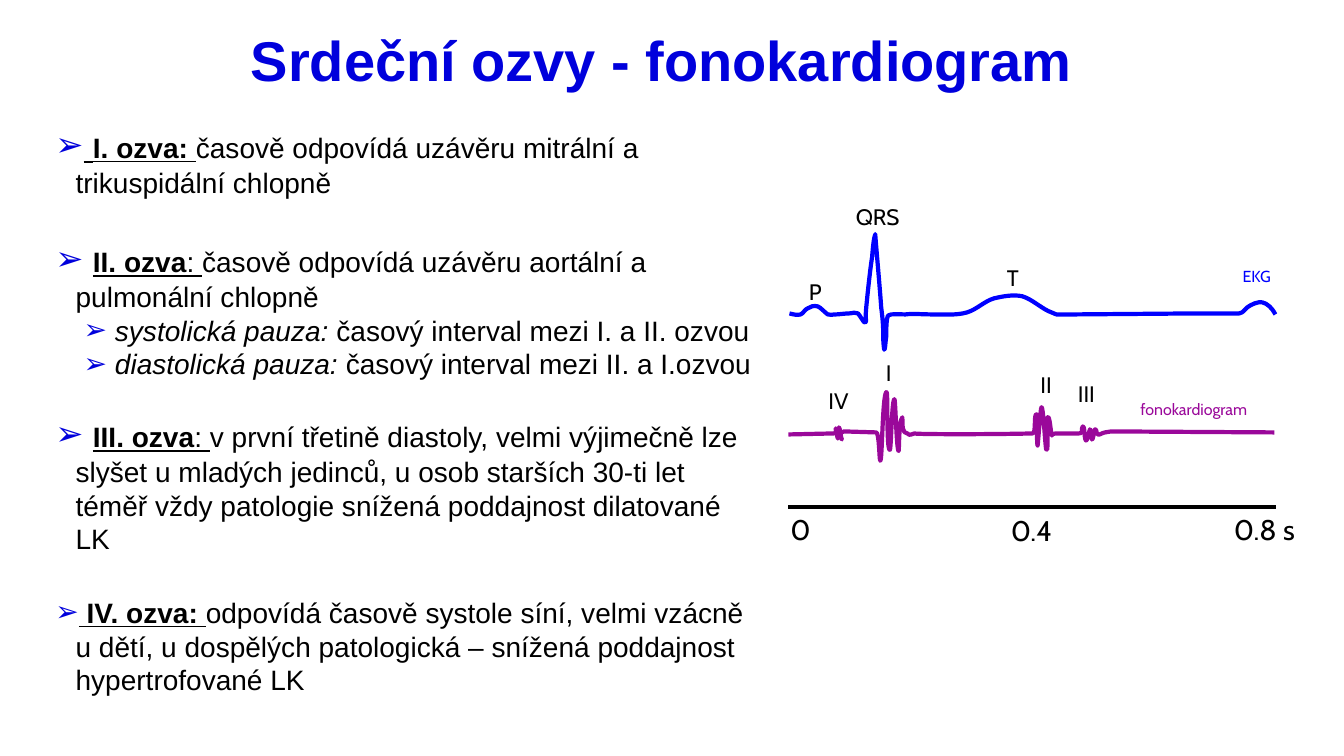
from lxml.etree import SubElement
from pptx import Presentation
from pptx.dml.color import RGBColor
from pptx.enum.shapes import MSO_CONNECTOR
from pptx.enum.text import MSO_ANCHOR, MSO_AUTO_SIZE, PP_ALIGN
from pptx.oxml.ns import qn
from pptx.util import Inches, Pt

COLORS = {"title": "0000DC", "text": "000000", "ekg": "0000FF", "phono": "9A089A"}
TITLE_BOX = (0.68, 0.36, 11.76, 0.49)
BODY_BOX = (0.48, 1.24, 7.03, 5.73)
CHART_ORIGIN = (7.8, 2)

BODY = [
    (0, 0, [(" ", 24, "bu"), ("I. ozva: ", 20, "bu"),
            ("časově odpovídá uzávěru mitrální a trikuspidální chlopně", 20, "")]),
    (0, 28.7, [(" ", 24, "b"), ("II. ozva", 20, "bu"), (": ", 20, "u"),
               ("časově odpovídá uzávěru aortální a pulmonální chlopně", 20, "")]),
    (1, 0, [(" ", 20, ""), ("systolická pauza: ", 20, "i"),
            ("časový interval mezi I. a II. ozvou", 20, "")]),
    (1, 0, [(" ", 20, ""), ("diastolická pauza: ", 20, "i"),
            ("časový interval mezi II. a I.ozvou", 20, "")]),
    (0, 24.2, [(" ", 24, "b"), ("III. ozva", 20, "bu"), (": ", 20, "u"),
               ("v první třetině diastoly, velmi výjimečně lze slyšet u mladých jedinců, "
                "u osob starších 30-ti let téměř vždy patologie snížená poddajnost "
                "dilatované LK", 20, "")]),
    (0, 28.7, [(" IV. ozva: ", 20, "bu"),
               ("odpovídá časově systole síní, velmi vzácně u dětí, u dospělých "
                "patologická – snížená poddajnost hypertrofované LK", 20, "")]),
]

EKG = [
    (3, 111), (7, 112, 11, 113, 14, 112), (17, 111, 18, 107, 21, 106),
    (24, 104, 27, 103, 31, 104), (34, 105, 38, 110, 41, 112),
    (44, 113, 45, 112, 49, 112), (52, 112, 58, 111, 62, 111),
    (66, 111, 68, 109, 71, 111), (73, 113, 77, 121, 78, 120),
    (80, 119, 78, 118, 79, 107), (80, 96, 83, 67, 85, 55),
    (86, 42, 87, 35, 88, 33), (88, 31, 88, 32, 89, 44),
    (90, 56, 93, 90, 94, 105), (96, 120, 96, 127, 96, 134),
    (96, 141, 97, 147, 97, 147), (98, 147, 98, 140, 99, 134),
    (99, 128, 99, 115, 101, 113), (104, 111, 111, 112, 118, 112),
    (125, 111, 135, 112, 145, 112), (155, 112, 169, 113, 179, 110),
    (189, 107, 196, 99, 206, 96), (215, 94, 225, 92, 234, 94),
    (244, 97, 254, 107, 263, 110), (271, 113, 262, 112, 285, 112), (404, 111),
    (431, 111, 443, 111, 449, 111), (454, 110, 454, 107, 457, 105),
    (461, 102, 468, 99, 472, 100), (477, 101, 482, 106, 485, 112),
]
PHONO = [
    (2, 231), (4, 231, 45, 230, 47, 230), (51, 230, 48, 225, 49, 225),
    (50, 225, 50, 234, 51, 235), (52, 235, 51, 225, 52, 224),
    (53, 223, 54, 235, 55, 236), (55, 237, 51, 228, 57, 228), (89, 229),
    (92, 229, 92, 255, 93, 257), (95, 259, 95, 194, 99, 189),
    (101, 183, 99, 239, 102, 246), (104, 254, 104, 199, 107, 196),
    (108, 193, 109, 242, 111, 247), (112, 253, 111, 217, 115, 214),
    (115, 223, 115, 230, 120, 230), (122, 233, 125, 230, 127, 230),
    (129, 231, 204, 231, 244, 230), (248, 230, 245, 211, 248, 211),
    (249, 210, 248, 236, 249, 242), (249, 248, 252, 203, 253, 204),
    (255, 204, 257, 251, 258, 246), (260, 250, 258, 216, 259, 214),
    (261, 211, 262, 228, 263, 231), (264, 234, 262, 230, 267, 230),
    (271, 230, 285, 230, 290, 230), (295, 231, 292, 224, 294, 223),
    (296, 222, 295, 234, 297, 237), (298, 239, 300, 228, 301, 226),
    (302, 224, 302, 235, 303, 236), (304, 237, 305, 228, 306, 226),
    (308, 225, 307, 231, 309, 231), (310, 232, 314, 229, 316, 229),
    (322, 228), (484, 229),
]

LABELS = [
    ("0", -0.15, 3.03, 0.58, 0.44, 20.3, "text"),
    ("0.8 s", 4.29, 3.03, 0.9, 0.44, 20.3, "text"),
    ("0.4", 2.04, 3.04, 0.78, 0.44, 20.3, "text"),
    ("EKG", 4.34, 0.59, 0.65, 0.29, 11.4, "ekg"),
    ("fonokardiogram", 3.04, 1.91, 2, 0.29, 11.4, "phono"),
] + [(wave, x, y, 0.65, 0.37, 16, "text") for wave, x, y in [
    ("P", -0.04, 0.71), ("QRS", 0.58, -0.03), ("T", 1.92, 0.57), ("II", 2.25, 1.63),
    ("III", 2.65, 1.72), ("IV", 0.19, 1.79), ("I", 0.69, 1.51)]]


def rgb(name):
    """Return the named colour."""
    return RGBColor.from_string(COLORS[name])


def place(sp, box):
    """Move a text placeholder to a box and reset its frame."""
    sp.left, sp.top, sp.width, sp.height = map(Inches, box)
    tf = sp.text_frame
    tf.margin_left = tf.margin_right = tf.margin_top = tf.margin_bottom = 0
    tf.word_wrap = True
    tf.auto_size = MSO_AUTO_SIZE.NONE
    tf.vertical_anchor = MSO_ANCHOR.TOP
    return tf


def style(font, size, color, name="Arial"):
    """Set the size, colour and typeface of a font."""
    font.size, font.name = Pt(size), name
    font.color.rgb = rgb(color)


def add_title(slide, box):
    """Fill the title placeholder."""
    tf = place(slide.shapes.title, box)
    tf.text = "Srdeční ozvy - fonokardiogram"
    p = tf.paragraphs[0]
    p.alignment, p.line_spacing = PP_ALIGN.CENTER, Pt(40)
    style(p.runs[0].font, 40, "title")
    p.runs[0].font.bold = True


def add_bullet(p, level):
    """Give a paragraph its arrow bullet and hanging indent."""
    pPr = p._p.get_or_add_pPr()
    pPr.set("marL", str(Inches((0.27, 0.55)[level])))
    pPr.set("indent", str(Inches(-0.2)))
    SubElement(SubElement(pPr, qn("a:buClr")), qn("a:srgbClr")).set("val", COLORS["title"])
    SubElement(pPr, qn("a:buChar")).set("char", "➢")


def add_body(slide, box):
    """Fill the body placeholder with the heart sounds."""
    tf = place(slide.placeholders[1], box)
    for i, (level, before, runs) in enumerate(BODY):
        p = tf.add_paragraph() if i else tf.paragraphs[0]
        add_bullet(p, level)
        p.level, p.alignment, p.line_spacing = level, PP_ALIGN.LEFT, 1.0
        p.space_before, p.space_after = Pt(before), Pt(0)
        for text, size, marks in runs:
            r = p.add_run()
            r.text = text
            style(r.font, size, "text")
            r.font.bold, r.font.italic, r.font.underline = (m in marks for m in "biu")


def add_trace(slide, origin, trace, color):
    """Draw one signal of lines and cubic curves, in hundredths of an inch."""
    left, top = origin
    segs = [[(Inches(left + x / 100), Inches(top + y / 100))
             for x, y in zip(seg[::2], seg[1::2])] for seg in trace]
    builder = slide.shapes.build_freeform(*segs[0][0])
    builder.add_line_segments([seg[-1] for seg in segs[1:]], close=False)
    sp = builder.convert_to_shape()
    for line, seg in zip(list(sp._element.iter(qn("a:lnTo"))), segs[1:]):
        if len(seg) == 3:
            curve = line.makeelement(qn("a:cubicBezTo"))
            for x, y in seg:
                pt = SubElement(curve, qn("a:pt"))
                pt.set("x", str(x - sp.left))
                pt.set("y", str(y - sp.top))
            line.getparent().replace(line, curve)
    sp.shadow.inherit = False
    sp.fill.background()
    sp.line.color.rgb, sp.line.width = rgb(color), Pt(3)


def add_label(slide, origin, text, box, size, color):
    """Add one centred label in a box relative to the origin."""
    x, y, w, h = box
    sp = slide.shapes.add_textbox(*map(Inches, (origin[0] + x, origin[1] + y, w, h)))
    tf = sp.text_frame
    tf.word_wrap = True
    tf.text = text
    p = tf.paragraphs[0]
    p.alignment = PP_ALIGN.CENTER
    style(p.runs[0].font, size, color, "Cabin")


def add_chart_panel(slide, origin):
    """Draw both signals, the time axis and the labels."""
    left, top = origin
    add_trace(slide, origin, EKG, "ekg")
    y = Inches(top + 3.03)
    axis = slide.shapes.add_connector(
        MSO_CONNECTOR.STRAIGHT, Inches(left + 0.02), y, Inches(left + 4.86), y)
    SubElement(axis._element.spPr, qn("a:effectLst"))
    axis.line.color.rgb, axis.line.width = rgb("text"), Pt(3)
    add_trace(slide, origin, PHONO, "phono")
    for text, *box, size, color in LABELS:
        add_label(slide, origin, text, box, size, color)


def main():
    """Build and save the slide."""
    prs = Presentation()
    prs.slide_width, prs.slide_height = Inches(13.33), Inches(7.5)
    slide = prs.slides.add_slide(prs.slide_layouts[1])
    add_title(slide, TITLE_BOX)
    add_body(slide, BODY_BOX)
    add_chart_panel(slide, CHART_ORIGIN)
    prs.save("out.pptx")


if __name__ == "__main__":
    main()
